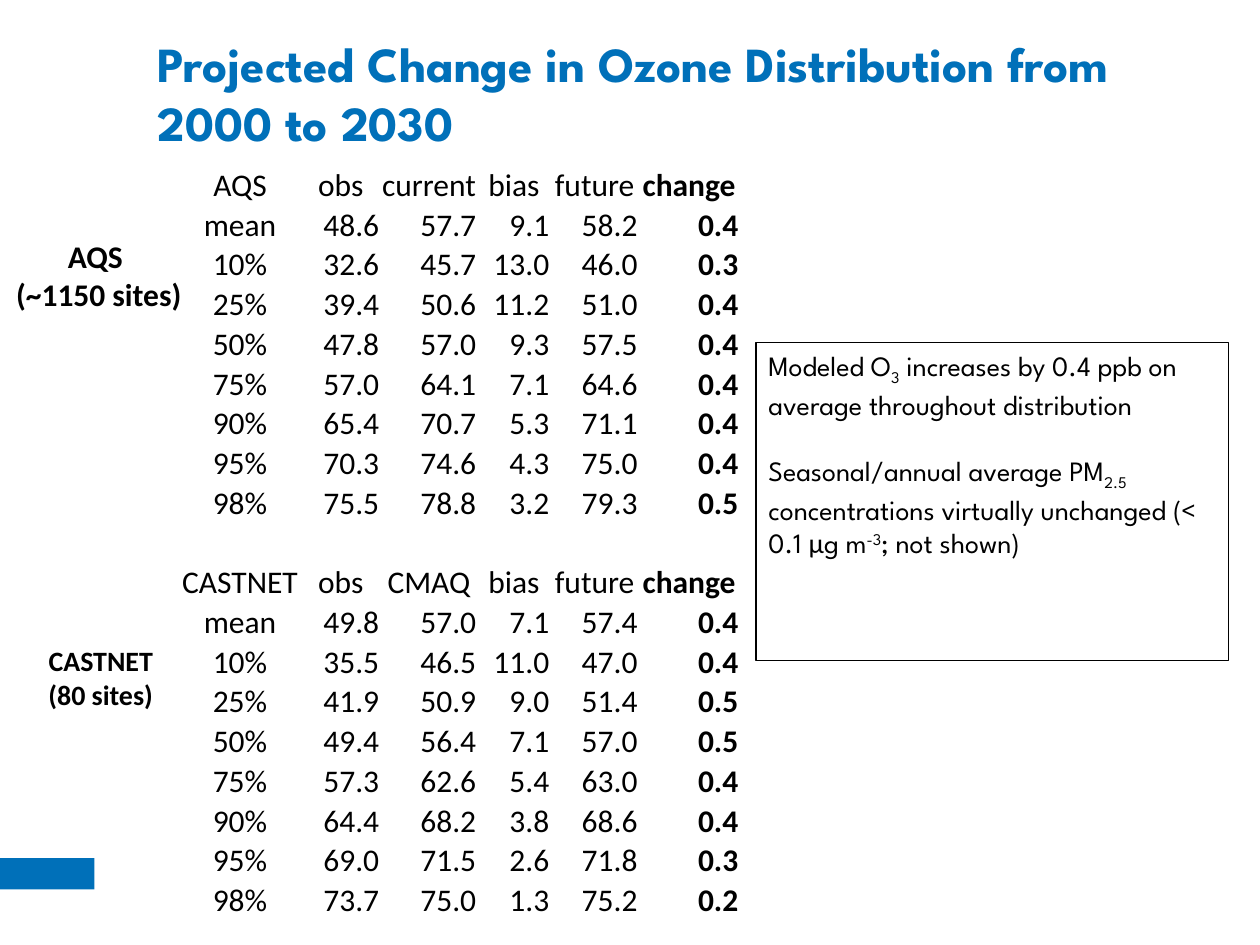
from dataclasses import dataclass

from pptx import Presentation
from pptx.dml.color import RGBColor
from pptx.enum.shapes import MSO_SHAPE
from pptx.enum.text import MSO_ANCHOR, PP_ALIGN
from pptx.util import Inches, Pt


@dataclass(frozen=True)
class Theme:
    blue: RGBColor = RGBColor(0x00, 0x70, 0xB9)
    black: RGBColor = RGBColor(0, 0, 0)
    heading_font: str = "League Spartan"
    data_font: str = "Calibri"
    title_size: int = 28
    data_size: int = 18
    note_size: int = 16


@dataclass(frozen=True)
class Box:
    left: float
    top: float
    width: float
    height: float

    def emu(self) -> tuple:
        return tuple(Inches(v) for v in (self.left, self.top, self.width, self.height))


@dataclass(frozen=True)
class SiteLabel:
    box: Box
    lines: tuple[str, str]
    size: int
    side_inset: float
    wrap: bool


@dataclass(frozen=True)
class Span:
    text: str
    baseline: int = 0  # percent: negative is subscript, positive superscript
    font: str = Theme.heading_font


THEME = Theme()
COLUMN_WIDTHS = (0.97, 0.63, 0.77, 0.58, 0.7, 0.8)
ROW_HEIGHT = 0.31

# Ozone statistics in ppb; the empty row parts the two networks
OZONE_ROWS = [line.split() for line in """\
AQS obs current bias future change
mean 48.6 57.7 9.1 58.2 0.4
10% 32.6 45.7 13.0 46.0 0.3
25% 39.4 50.6 11.2 51.0 0.4
50% 47.8 57.0 9.3 57.5 0.4
75% 57.0 64.1 7.1 64.6 0.4
90% 65.4 70.7 5.3 71.1 0.4
95% 70.3 74.6 4.3 75.0 0.4
98% 75.5 78.8 3.2 79.3 0.5

CASTNET obs CMAQ bias future change
mean 49.8 57.0 7.1 57.4 0.4
10% 35.5 46.5 11.0 47.0 0.4
25% 41.9 50.9 9.0 51.4 0.5
50% 49.4 56.4 7.1 57.0 0.5
75% 57.3 62.6 5.4 63.0 0.4
90% 64.4 68.2 3.8 68.6 0.4
95% 69.0 71.5 2.6 71.8 0.3
98% 73.7 75.0 1.3 75.2 0.2""".split("\n")]

SITE_LABELS = (
    SiteLabel(Box(0.08, 1.83, 1.41, 0.71), ("AQS ", "(~1150 sites)"), 18, 0, True),
    SiteLabel(Box(0.28, 5.06, 1.04, 0.64), ("CASTNET", "(80 sites)"), 16, 0.1, False),
)

FINDINGS = (
    (Span("Modeled O"), Span("3", -25),
     Span(" increases by 0.4 ppb on average throughout distribution")),
    (Span("Seasonal/annual average PM"), Span("2.5", -25),
     Span(" concentrations virtually unchanged (< 0.1 "),
     Span("μ", font=THEME.data_font), Span("g m"), Span("-3", 30),
     Span("; not shown)")),
)


def add_run(p, text: str, size: int, font: str, color: RGBColor = THEME.black,
            bold: bool = False, baseline: int = 0) -> None:
    r = p.add_run()
    r.text = text
    r.font.size = Pt(size)
    r.font.name = font
    r.font.bold = bold
    r.font.color.rgb = color
    if baseline:
        r._r.get_or_add_rPr().set("baseline", str(baseline * 1000))


def add_rect(s, box: Box):
    sp = s.shapes.add_shape(MSO_SHAPE.RECTANGLE, *box.emu())
    sp.shadow.inherit = False
    return sp


def add_accent(s) -> None:
    sp = add_rect(s, Box(0, 6.81, 0.75, 0.25))
    sp.fill.solid()
    sp.fill.fore_color.rgb = THEME.blue
    sp.line.fill.background()


def add_ozone_table(s) -> None:
    box = Box(1.42, 1.31, sum(COLUMN_WIDTHS), ROW_HEIGHT * len(OZONE_ROWS))
    table = s.shapes.add_table(len(OZONE_ROWS), len(COLUMN_WIDTHS), *box.emu()).table
    table.first_row = table.horz_banding = False
    for column, width in zip(table.columns, COLUMN_WIDTHS):
        column.width = Inches(width)
    for row, values in zip(table.rows, OZONE_ROWS):
        row.height = Inches(ROW_HEIGHT)
        for cell in row.cells:
            cell.fill.background()
            cell.vertical_anchor = MSO_ANCHOR.BOTTOM
            cell.margin_left = cell.margin_right = cell.margin_top = Inches(0.01)
            cell.margin_bottom = 0
        for i, (cell, value) in enumerate(zip(row.cells, values)):
            p = cell.text_frame.paragraphs[0]
            is_number = i > 0 and value[0].isdigit()
            p.alignment = PP_ALIGN.RIGHT if is_number else PP_ALIGN.CENTER
            add_run(p, value, THEME.data_size, THEME.data_font,
                    bold=i == len(COLUMN_WIDTHS) - 1)


def add_title(s, text: str) -> None:
    tf = s.shapes.add_textbox(*Box(1.09, 0.11, 8.69, 1.25).emu()).text_frame
    tf.word_wrap = True
    tf.vertical_anchor = MSO_ANCHOR.MIDDLE
    tf.margin_left = Inches(0.16)
    add_run(tf.paragraphs[0], text, THEME.title_size, THEME.heading_font,
            THEME.blue, bold=True)


def add_findings(s) -> None:
    sp = add_rect(s, Box(6, 2.72, 3.75, 2.52))
    sp.fill.background()
    sp.line.color.rgb = THEME.black
    sp.line.width = Pt(0.75)
    tf = sp.text_frame
    tf.word_wrap = True
    tf.vertical_anchor = MSO_ANCHOR.TOP
    for i, spans in enumerate(FINDINGS):
        p = tf.add_paragraph() if i else tf.paragraphs[0]
        p.alignment = PP_ALIGN.LEFT
        if i:
            p.space_before = Pt(19)
        for span in spans:
            add_run(p, span.text, THEME.note_size, span.font, baseline=span.baseline)


def add_site_label(s, label: SiteLabel) -> None:
    tf = s.shapes.add_textbox(*label.box.emu()).text_frame
    tf.word_wrap = label.wrap
    tf.margin_left = tf.margin_right = Inches(label.side_inset)
    p = tf.paragraphs[0]
    p.alignment = PP_ALIGN.CENTER
    for i, line in enumerate(label.lines):
        if i:
            p.add_line_break()
        add_run(p, line, label.size, THEME.data_font, bold=True)


def main() -> None:
    prs = Presentation()
    prs.slide_width, prs.slide_height = Inches(10), Inches(7.5)
    s = prs.slides.add_slide(prs.slide_layouts[6])
    add_accent(s)
    add_ozone_table(s)
    add_title(s, "Projected Change in Ozone Distribution from 2000 to 2030")
    add_findings(s)
    for label in SITE_LABELS:
        add_site_label(s, label)
    prs.save("out.pptx")


if __name__ == "__main__":
    main()
